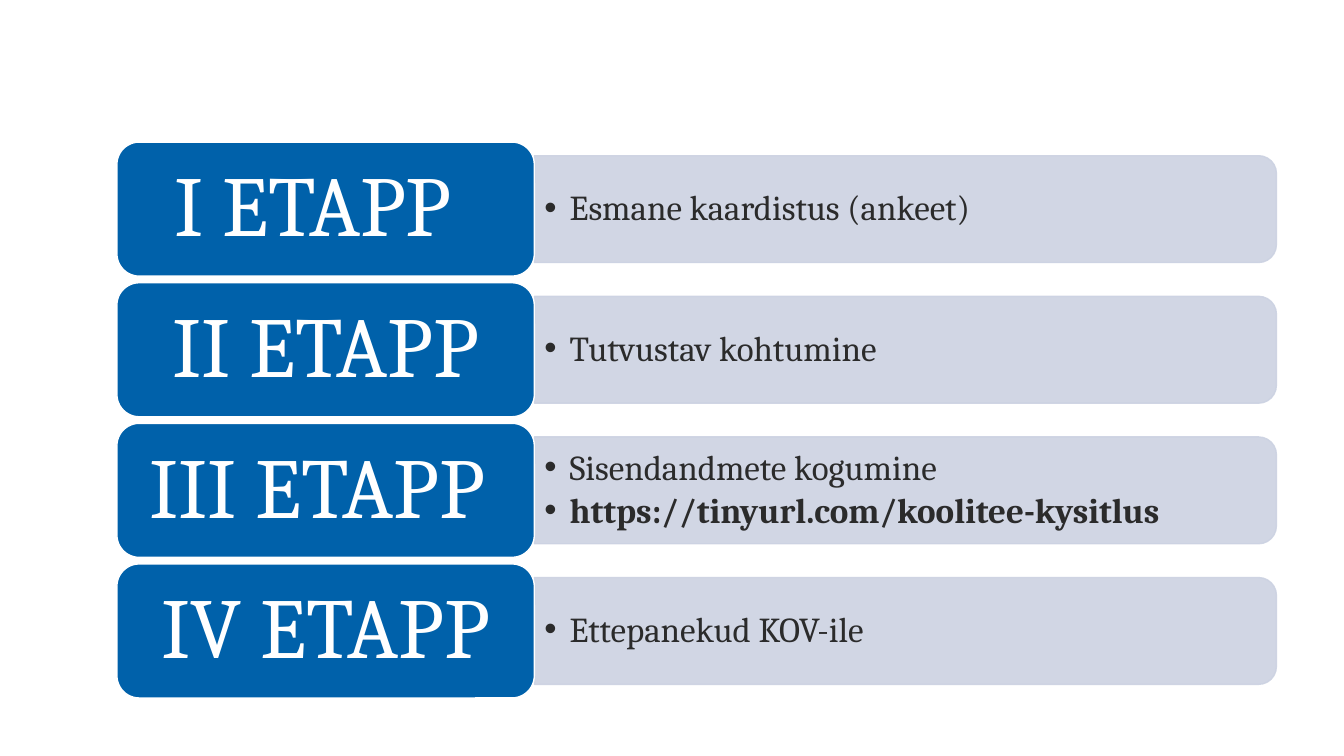
import pptx
import pptx.dml.color
import pptx.enum.shapes
import pptx.enum.text
import pptx.oxml
import pptx.oxml.ns
import pptx.util
import lxml.etree

SHAPES = pptx.enum.shapes.MSO_SHAPE
ALIGN = pptx.enum.text.PP_ALIGN
COLOURS = {"label": "0061AA", "bar": "CCD2E2", "white": "FFFFFF", "ink": "2B2B2B"}
STAGES = [
    ("I ETAPP\t", ["Esmane kaardistus (ankeet)"]),
    ("II ETAPP", ["Tutvustav kohtumine"]),
    ("III ETAPP\t", ["Sisendandmete kogumine", "https://tinyurl.com/koolitee-kysitlus"]),
    ("IV ETAPP", ["Ettepanekud KOV-ile"]),
]
FIRST_ROW, ROW_STEP = 18.8, 18.6
LABEL_LEFT, LABEL_WIDTH, LABEL_HEIGHT = 8.7, 31.06, 17.73
BAR_LEFT, BAR_WIDTH, BAR_HEIGHT = 39.76, 55.21, 14.13
LIST_WIDTH, LIST_HEIGHT = 54.84, 12.8


def colour(name):
    return pptx.dml.color.RGBColor.from_string(COLOURS[name])


def apply(target, values):
    for name, value in values.items():
        setattr(target, name, value)


class StageSlide:
    font = "Cambria"

    def __init__(self, deck, layout):
        self.deck = deck
        self.page = deck.slides.add_slide(deck.slide_layouts[layout])
        title = self.page.shapes.title.element
        title.getparent().remove(title)
        self.lists = list(self.page.placeholders)

    def area(self, left, top, width, height):
        across, down = self.deck.slide_width / 100, self.deck.slide_height / 100
        return [round(n) for n in (left * across, top * down, width * across, height * down)]

    def shape(self, kind, area, fill, line):
        box = self.page.shapes.add_shape(kind, *area)
        box.shadow.inherit = False
        box.fill.solid()
        box.fill.fore_color.rgb = colour(fill)
        box.line.color.rgb = colour(line)
        box.line.width = pptx.util.Pt(1)
        return box

    def frame(self, box, side, edge):
        frame = box.text_frame
        apply(frame, {
            "word_wrap": True,
            "auto_size": pptx.enum.text.MSO_AUTO_SIZE.NONE,
            "vertical_anchor": pptx.enum.text.MSO_ANCHOR.MIDDLE,
            "margin_left": pptx.util.Inches(side),
            "margin_right": pptx.util.Inches(side),
            "margin_top": pptx.util.Inches(edge),
            "margin_bottom": pptx.util.Inches(edge),
        })
        return frame

    def wording(self, para, text, size, ink, align, after=0, bold=False):
        apply(para, {"alignment": align, "line_spacing": 0.9,
                     "space_before": pptx.util.Pt(0), "space_after": pptx.util.Pt(after)})
        span = para.add_run()
        span.text = text
        apply(span.font, {"name": self.font, "size": pptx.util.Pt(size), "bold": bold})
        span.font.color.rgb = colour(ink)

    def bar(self, top):
        left, top, width, height = self.area(BAR_LEFT, top, BAR_WIDTH, BAR_HEIGHT)
        shift = (width - height) // 2
        box = self.shape(SHAPES.ROUND_2_SAME_RECTANGLE,
                         (left + shift, top - shift, height, width), "bar", "bar")
        box.rotation = 90
        for tint in box.element.spPr.iter(pptx.oxml.ns.qn("a:srgbClr")):
            lxml.etree.SubElement(tint, pptx.oxml.ns.qn("a:alpha")).set("val", "90000")

    def bullets(self, box, top, items):
        area = self.area(BAR_LEFT, top, LIST_WIDTH, LIST_HEIGHT)
        apply(box, dict(zip(("left", "top", "width", "height"), area)))
        box.element.getparent().append(box.element)
        frame = self.frame(box, 0.1, 0.05)
        for index, item in enumerate(items):
            para = frame.add_paragraph() if index else frame.paragraphs[0]
            settings = para._p.get_or_add_pPr()
            settings.set("marL", str(pptx.util.Inches(0.25)))
            settings.set("indent", str(-pptx.util.Inches(0.25)))
            lxml.etree.SubElement(settings, pptx.oxml.ns.qn("a:buChar")).set("char", "•")
            self.wording(para, item, 25, "ink", ALIGN.LEFT, 3.75, item.startswith("https"))

    def label(self, top, text):
        area = self.area(LABEL_LEFT, top, LABEL_WIDTH, LABEL_HEIGHT)
        box = self.shape(SHAPES.ROUNDED_RECTANGLE, area, "label", "white")
        frame = self.frame(box, 0.25, 0.13)
        self.wording(frame.paragraphs[0], text, 61, "white", ALIGN.CENTER)


def main():
    deck = pptx.Presentation()
    deck.slide_width = pptx.util.Inches(13.33)
    deck.slide_height = pptx.util.Inches(7.5)
    slide = StageSlide(deck, 4)
    for row, (name, items) in enumerate(STAGES):
        top = FIRST_ROW + row * ROW_STEP
        slide.bar(top + (LABEL_HEIGHT - BAR_HEIGHT) / 2)
        slide.bullets(slide.lists[row], top + (LABEL_HEIGHT - LIST_HEIGHT) / 2, items)
        slide.label(top, name)
    deck.save("out.pptx")


if __name__ == "__main__":
    main()
